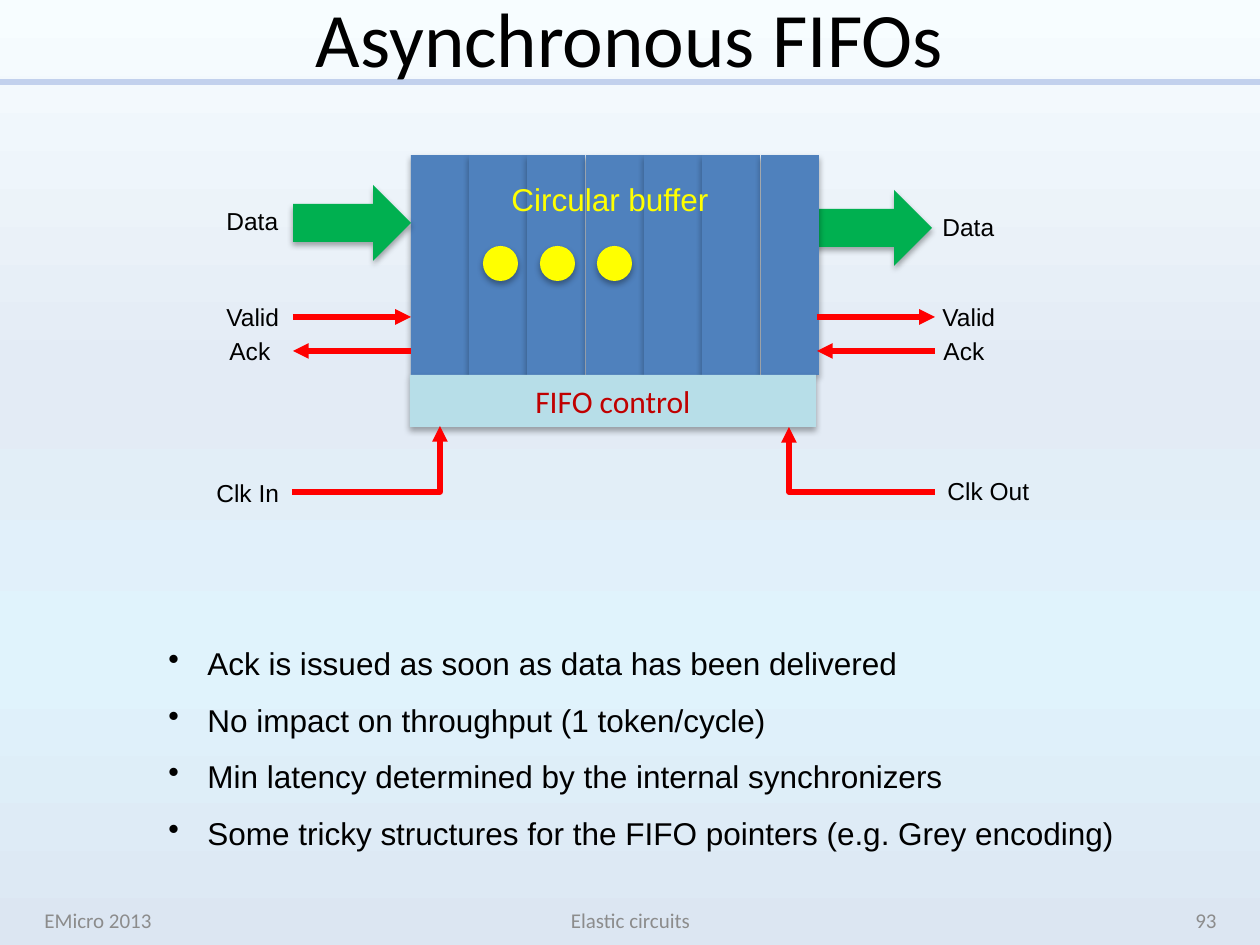
import dataclasses

import pptx
import pptx.dml.color
import pptx.enum.shapes
import pptx.enum.text
import pptx.oxml
import pptx.oxml.ns
import pptx.util

SHAPE = pptx.enum.shapes.MSO_SHAPE
CONNECTOR = pptx.enum.shapes.MSO_CONNECTOR
ALIGN = pptx.enum.text.PP_ALIGN
ANCHOR = pptx.enum.text.MSO_ANCHOR
AUTO_SIZE = pptx.enum.text.MSO_AUTO_SIZE
PIXELS_PER_INCH = 126


@dataclasses.dataclass(frozen=True)
class Theme:
    """Colours, fonts and type sizes of the slide."""
    black: str = "000000"
    footer: str = "8C8C8C"
    rule: str = "C2D1ED"
    cell: str = "4F81BD"
    data: str = "00B050"
    token: str = "FFFF00"
    signal: str = "FF0000"
    control: str = "B7DEE8"
    control_text: str = "C00000"
    gradient: tuple = ((0, "F7FDFF"), (40, "E3EBF5"), (70, "E0F3FC"), (100, "DCE6F2"))
    heading_font: str = "Calibri"
    body_font: str = "Arial"
    title_size: int = 44
    body_size: int = 18
    label_size: int = 14
    footer_size: int = 12


THEME = Theme()


def px(length):
    """Turn pixels into EMU."""
    return pptx.util.Emu(round(length * 914400 / PIXELS_PER_INCH))


def rgb(value):
    """Turn a hex string into a colour."""
    return pptx.dml.color.RGBColor.from_string(value)


def apply(target, values):
    """Set attributes from a dict of format values."""
    for name, value in values.items():
        setattr(target, name, value)


def add_xml(parent, tag, body="", **attributes):
    """Append a drawing element, with optional inner markup."""
    pairs = "".join(f' {name}="{value}"' for name, value in attributes.items())
    namespace = pptx.oxml.ns.nsdecls("a")
    parent.append(pptx.oxml.parse_xml(f"<a:{tag} {namespace}{pairs}>{body}</a:{tag}>"))


def write(shape, lines, size, font, color, align=ALIGN.LEFT, wrap=True, anchor=ANCHOR.MIDDLE):
    """Write one formatted paragraph per line and return the paragraphs."""
    frame = shape.text_frame
    apply(frame, {"word_wrap": wrap, "auto_size": AUTO_SIZE.NONE, "vertical_anchor": anchor})
    frame.text = "\n".join(lines)
    for paragraph in frame.paragraphs:
        paragraph.alignment = align
        run_font = paragraph.runs[0].font
        apply(run_font, {"size": pptx.util.Pt(size), "name": font})
        run_font.color.rgb = rgb(color)
    return frame.paragraphs


def paint_background(slide):
    """Fill the slide with the vertical gradient."""
    stops = "".join(f'<a:gs pos="{position * 1000}"><a:srgbClr val="{color}"/></a:gs>'
                    for position, color in THEME.gradient)
    slide.background.fill.gradient()
    gradient = slide.element.find(".//" + pptx.oxml.ns.qn("a:gradFill"))
    for child in list(gradient):
        gradient.remove(child)
    add_xml(gradient, "gsLst", stops)
    add_xml(gradient, "lin", ang=5400000, scaled=0)


def add_title(slide, text, box):
    """Place the title placeholder above what is already drawn."""
    title = slide.shapes.title
    apply(title, dict(zip(("left", "top", "width", "height"), map(px, box))))
    write(title, [text], THEME.title_size, THEME.heading_font, THEME.black, ALIGN.CENTER)
    slide.shapes.element.append(title.element)


def add_block(slide, kind, box, color):
    """Add a filled shape with a soft shadow below it."""
    shape = slide.shapes.add_shape(kind, *map(px, box))
    shape.fill.solid()
    shape.fill.fore_color.rgb = rgb(color)
    shape.line.fill.background()
    shape.shadow.inherit = False
    effects = shape.element.spPr.find(pptx.oxml.ns.qn("a:effectLst"))
    shade = f'<a:srgbClr val="{THEME.black}"><a:alpha val="32000"/></a:srgbClr>'
    add_xml(effects, "outerShdw", shade, blurRad=pptx.util.Pt(3.5),
            dist=pptx.util.Pt(2.2), dir=5400000, rotWithShape=0)
    return shape


def add_text(slide, lines, box, size, color=THEME.black, font=THEME.body_font, **options):
    """Add a text box and return its paragraphs."""
    textbox = slide.shapes.add_textbox(*map(px, box))
    return write(textbox, lines, size, font, color, **options)


def add_label(slide, text, box, size=THEME.label_size, color=THEME.black):
    """Add an unwrapped label in the diagram."""
    add_text(slide, [text], box, size, color, wrap=False, anchor=ANCHOR.TOP)


def add_line(slide, start, end, color=THEME.signal, width=3, arrow=True, bent=False):
    """Add a straight or right-angled connector."""
    kind = CONNECTOR.ELBOW if bent else CONNECTOR.STRAIGHT
    connector = slide.shapes.add_connector(kind, *map(px, start + end))
    connector.line.color.rgb = rgb(color)
    connector.line.width = pptx.util.Pt(width)
    properties = connector.element.spPr
    if bent:
        properties.find(pptx.oxml.ns.qn("a:prstGeom")).set("prst", "bentConnector2")
    if arrow:
        add_xml(properties.find(pptx.oxml.ns.qn("a:ln")), "tailEnd", type="triangle")
    add_xml(properties, "effectLst")


def add_bullets(slide, lines, box):
    """Add a bulleted list with a hanging indent."""
    paragraphs = add_text(slide, lines, box, THEME.body_size, wrap=False, anchor=ANCHOR.TOP)
    for paragraph in paragraphs:
        paragraph.line_spacing = 1.5
        properties = paragraph._p.get_or_add_pPr()
        properties.set("marL", str(px(39)))
        properties.set("indent", str(-px(39)))
        add_xml(properties, "buChar", char="•")


def add_buffer(slide):
    """Draw the buffer cells, their tokens and the control bar."""
    for index in range(7):
        add_block(slide, SHAPE.RECTANGLE, (411 + index * 175 // 3, 155, 58, 220), THEME.cell)
    add_label(slide, "Circular buffer", (499, 174, 224, 50), THEME.body_size, THEME.token)
    for index in range(3):
        add_block(slide, SHAPE.OVAL, (483 + index * 57, 246, 35, 35), THEME.token)
    control = add_block(slide, SHAPE.RECTANGLE, (410, 375, 406, 52), THEME.control)
    write(control, ["FIFO control"], THEME.body_size, THEME.heading_font,
          THEME.control_text, ALIGN.CENTER)


def add_signals(slide):
    """Draw the handshake and clock lines with all labels."""
    for left, right in ((293, 411), (817, 935)):
        add_line(slide, (left, 317), (right, 317))
        add_line(slide, (right, 351), (left, 351))
    add_line(slide, (292, 492), (440, 426), bent=True)
    add_line(slide, (935, 492), (789, 427), bent=True)
    for text, left, top, width in (
            ("Data", 214, 200, 78), ("Data", 930, 206, 78),
            ("Valid", 214, 296, 78), ("Valid", 930, 296, 78),
            ("Ack", 217, 330, 67), ("Ack", 931, 330, 67),
            ("Clk In", 204, 472, 88), ("Clk Out", 935, 470, 108)):
        add_label(slide, text, (left, top, width, 43))


def add_footers(slide):
    """Add the three texts at the bottom of the slide."""
    for text, left, width, align in (("EMicro 2013", 32, 294, ALIGN.LEFT),
                                     ("Elastic circuits", 431, 399, ALIGN.CENTER),
                                     ("93", 935, 294, ALIGN.RIGHT)):
        add_text(slide, [text], (left, 895, width, 50), THEME.footer_size, THEME.footer,
                 THEME.heading_font, align=align)


def main():
    """Build and save the slide."""
    presentation = pptx.Presentation()
    apply(presentation, {"slide_width": px(1260), "slide_height": px(945)})
    slide = presentation.slides.add_slide(presentation.slide_layouts[5])
    paint_background(slide)
    add_line(slide, (0, 82), (1260, 82), THEME.rule, 4, arrow=False)
    add_block(slide, SHAPE.RIGHT_ARROW, (814, 190, 118, 76), THEME.data)
    add_title(slide, "Asynchronous FIFOs", (63, 0, 1134, 73))
    add_buffer(slide)
    add_block(slide, SHAPE.RIGHT_ARROW, (293, 185, 118, 76), THEME.data)
    add_signals(slide)
    add_bullets(slide, ["Ack is issued as soon as data has been delivered",
                        "No impact on throughput (1 token/cycle)",
                        "Min latency determined by the internal synchronizers",
                        "Some tricky structures for the FIFO pointers (e.g. Grey encoding)"],
                (156, 619, 980, 242))
    add_footers(slide)
    presentation.save("out.pptx")


if __name__ == "__main__":
    main()
